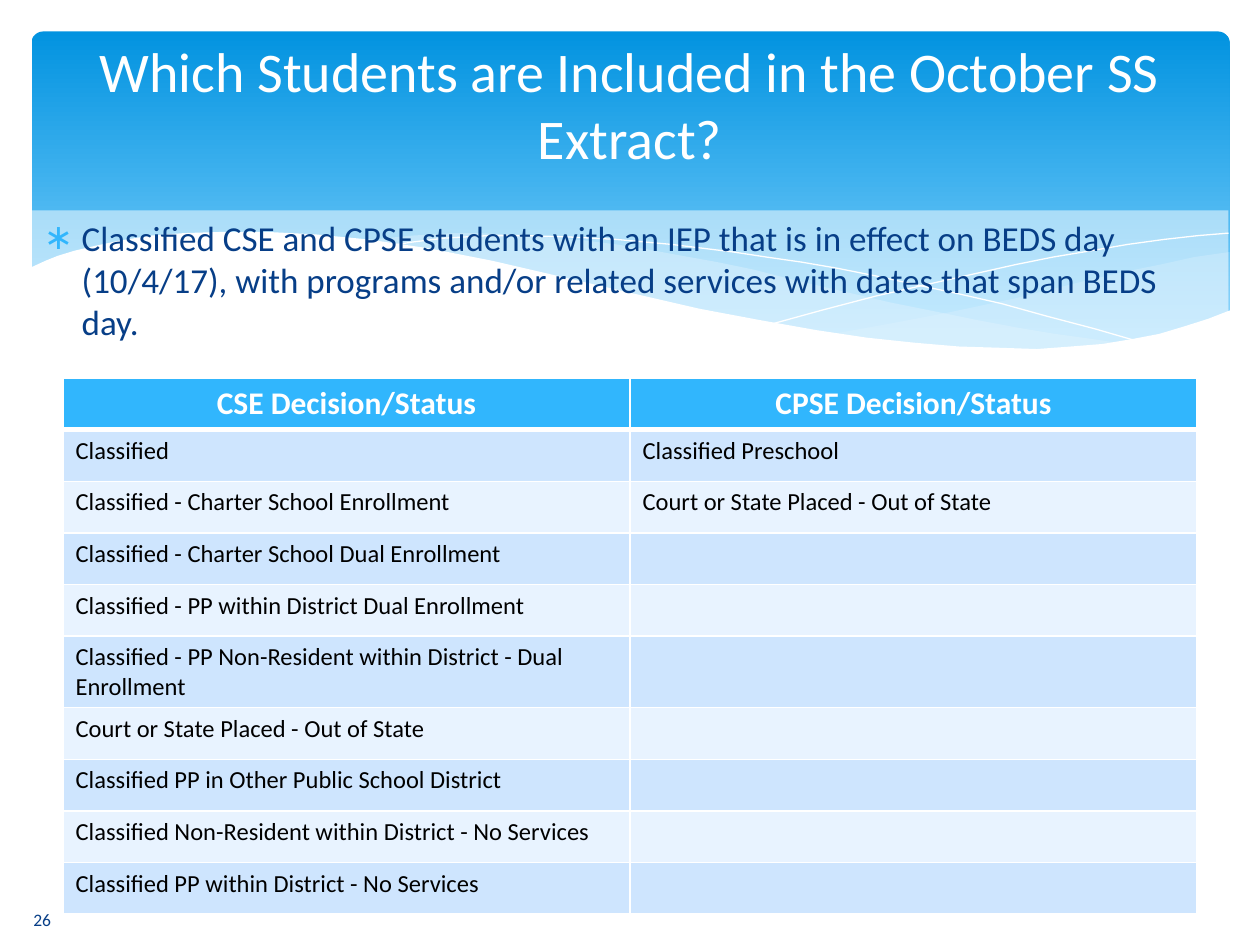
from lxml.etree import SubElement
from pptx import Presentation
from pptx.dml.color import RGBColor
from pptx.enum.shapes import MSO_SHAPE
from pptx.enum.text import MSO_ANCHOR, PP_ALIGN
from pptx.oxml.ns import qn
from pptx.util import Inches, Pt

COLORS = {
    "top": "0293E0", "bottom": "83D3FE", "wave": "C6E7FC", "white": "FFFFFF",
    "navy": "073E87", "accent": "31B6FD", "odd": "CEE5FE", "even": "E8F3FF",
    "black": "000000",
}

RIGHT_WAVE = [
    (9.76, 2), (9.48, 2.04), (9.21, 2.1), (8.91, 2.16), (8.61, 2.23), (8.05, 2.37),
    (7.53, 2.48), (7.06, 2.57), (6.61, 2.65), (6.91, 2.69), (7.19, 2.72), (7.45, 2.75),
    (7.69, 2.77), (8.03, 2.78), (8.35, 2.77), (8.63, 2.75), (8.89, 2.72), (9.13, 2.67),
    (9.35, 2.62), (9.49, 2.57), (9.63, 2.52), (9.76, 2.47),
]
LONG_WAVE = [
    (8.93, 2.73), (8.66, 2.69), (8.37, 2.65), (8.07, 2.6), (7.75, 2.54), (7.41, 2.47),
    (7.06, 2.4), (6.68, 2.31), (6.29, 2.22), (5.98, 2.14), (5.69, 2.08), (5.41, 2.03),
    (5.14, 1.98), (4.89, 1.94), (4.65, 1.91), (4.42, 1.89), (4.2, 1.87), (3.99, 1.86),
    (3.8, 1.85), (3.61, 1.85), (3.28, 1.87), (2.86, 1.91), (3.23, 1.96), (3.62, 2.03),
    (4.04, 2.11), (4.49, 2.22), (4.91, 2.32), (5.3, 2.4), (5.66, 2.48), (6.01, 2.55),
    (6.34, 2.61), (6.65, 2.66), (6.95, 2.7), (7.22, 2.74), (7.48, 2.76), (7.85, 2.78),
    (8.28, 2.78), (8.57, 2.77), (8.76, 2.75),
]
FALLING_LINE = [
    (3.09, 1.95), (3.28, 1.92), (3.53, 1.89), (3.87, 1.87), (4.16, 1.87), (4.5, 1.88),
    (4.89, 1.9), (5.33, 1.94), (5.82, 2), (6.08, 2.04), (6.36, 2.08), (6.65, 2.13),
    (6.95, 2.19), (7.27, 2.26), (7.6, 2.33), (7.95, 2.41), (8.31, 2.51), (8.69, 2.61),
    (9.07, 2.72),
]
RISING_LINE = [
    (6.13, 2.57), (6.53, 2.46), (6.95, 2.35), (7.48, 2.23), (8.06, 2.1), (8.36, 2.04),
    (8.66, 1.99), (8.95, 1.94), (9.24, 1.9), (9.51, 1.87), (9.75, 1.85),
]
WHITE_WAVE = [
    (9.77, 2.46), (9.59, 2.53), (9.4, 2.59), (9.2, 2.65), (8.99, 2.69), (8.75, 2.73),
    (8.5, 2.75), (8.23, 2.77), (7.93, 2.76), (7.61, 2.75), (7.26, 2.72), (6.88, 2.68),
    (6.48, 2.62), (6.03, 2.54), (5.55, 2.45), (5.03, 2.33), (4.47, 2.2), (3.91, 2.07),
    (3.4, 1.97), (2.92, 1.9), (2.5, 1.86), (2.11, 1.84), (1.77, 1.84), (1.46, 1.85),
    (1.19, 1.87), (0.95, 1.91), (0.76, 1.95), (0.59, 1.99), (0.46, 2.03), (0.36, 2.07),
    (0.23, 2.13), (0.23, 3.29), (9.77, 3.29),
]
ROWS = [
    ("CSE Decision/Status", "CPSE Decision/Status"),
    ("Classified", "Classified Preschool"),
    ("Classified - Charter School Enrollment", "Court or State Placed - Out of State"),
    ("Classified - Charter School Dual Enrollment", ""),
    ("Classified - PP within District Dual Enrollment", ""),
    ("Classified - PP Non-Resident within District - Dual Enrollment", ""),
    ("Court or State Placed - Out of State", ""),
    ("Classified PP in Other Public School District", ""),
    ("Classified Non-Resident within District - No Services", ""),
    ("Classified PP within District - No Services", ""),
]


def rgb(name):
    return RGBColor.from_string(COLORS[name])


class Deck:
    """Holds the text style and the current slide, and draws each kind of element."""

    font = "Calibri"

    def __init__(self, s):
        self.s = s

    def paint(self, sp, color, opacity=100):
        sp.shadow.inherit = False
        sp.line.fill.background()
        sp.fill.solid()
        sp.fill.fore_color.rgb = rgb(color)
        if opacity < 100:
            clr = sp.fill._xPr.find(".//" + qn("a:srgbClr"))
            SubElement(clr, qn("a:alpha"), val=str(opacity * 1000))

    def style(self, p, size, color, bold=False, align=PP_ALIGN.LEFT):
        p.alignment = align
        for r in p.runs:
            r.font.name = self.font
            r.font.size = Pt(size)
            r.font.bold = bold
            r.font.color.rgb = rgb(color)

    def banner(self, *box):
        sp = self.s.shapes.add_shape(MSO_SHAPE.ROUNDED_RECTANGLE, *map(Inches, box))
        sp.adjustments[0] = 0.034
        sp.shadow.inherit = False
        sp.line.fill.background()
        sp.fill.gradient()
        sp.fill.gradient_angle = 270
        stops = zip(sp.fill.gradient_stops, (0, 0.9), ("top", "bottom"))
        for stop, position, color in stops:
            stop.position = position
            stop.color.rgb = rgb(color)

    def freeform(self, points, close):
        start, *rest = [(Inches(x), Inches(y)) for x, y in points]
        builder = self.s.shapes.build_freeform(*start)
        builder.add_line_segments(rest, close=close)
        return builder.convert_to_shape()

    def wave(self, points, color, opacity=100):
        self.paint(self.freeform(points, True), color, opacity)

    def curve(self, points):
        sp = self.freeform(points, False)
        sp.shadow.inherit = False
        sp.fill.background()
        sp.line.color.rgb = rgb("white")
        sp.line.width = Pt(0)

    def text(self, text, box, size, color):
        sp = self.s.shapes.add_textbox(*map(Inches, box))
        tf = sp.text_frame
        tf.word_wrap = True
        tf.vertical_anchor = MSO_ANCHOR.MIDDLE
        tf.text = text
        self.style(tf.paragraphs[0], size, color, align=PP_ALIGN.CENTER)

    def bullet_panel(self, text, box):
        sp = self.s.shapes.add_shape(MSO_SHAPE.RECTANGLE, *map(Inches, box))
        self.paint(sp, "white", 52)
        tf = sp.text_frame
        tf.word_wrap = True
        tf.vertical_anchor = MSO_ANCHOR.TOP
        tf.text = text
        p = tf.paragraphs[0]
        p.space_before = Pt(4)
        self.style(p, 20, "navy")
        pPr = p._p.get_or_add_pPr()
        pPr.set("marL", str(Inches(0.3)))
        pPr.set("indent", str(Inches(-0.3)))
        clr = SubElement(pPr, qn("a:buClr"))
        SubElement(clr, qn("a:srgbClr"), val=COLORS["accent"])
        SubElement(pPr, qn("a:buFont"), typeface=self.font)
        SubElement(pPr, qn("a:buChar"), char="∗")

    def borders(self, cell, top, bottom):
        tcPr = cell._tc.get_or_add_tcPr()
        for side, width in zip("LRTB", (1, 1, top, bottom)):
            ln = SubElement(tcPr, qn("a:ln" + side), w=str(Pt(width)))
            fill = SubElement(ln, qn("a:solidFill"))
            SubElement(fill, qn("a:srgbClr"), val=COLORS["white"])

    def table(self, rows, left, top, width, row_height):
        size = Inches(width), Inches(row_height * len(rows))
        table = self.s.shapes.add_table(
            len(rows), len(rows[0]), Inches(left), Inches(top), *size).table
        for i, row in enumerate(rows):
            table.rows[i].height = Inches(row_height)
            for j, text in enumerate(row):
                cell = table.cell(i, j)
                self.borders(cell, 3 if i == 1 else 1, 3 if i == 0 else 1)
                cell.fill.solid()
                band = "odd" if i % 2 else "even"
                cell.fill.fore_color.rgb = rgb(band if i else "accent")
                cell.text_frame.text = text
                p = cell.text_frame.paragraphs[0]
                if i == 0:
                    self.style(p, 18, "white", True, PP_ALIGN.CENTER)
                else:
                    self.style(p, 14, "black")


def main():
    prs = Presentation()
    prs.slide_width, prs.slide_height = Inches(10), Inches(7.5)
    deck = Deck(prs.slides.add_slide(prs.slide_layouts[6]))
    deck.banner(0.25, 0.25, 9.51, 2.7)
    deck.wave(RIGHT_WAVE, "wave", 29)
    deck.wave(LONG_WAVE, "wave", 40)
    deck.curve(FALLING_LINE)
    deck.curve(RISING_LINE)
    deck.wave(WHITE_WAVE, "white")
    deck.bullet_panel(
        "Classified CSE and CPSE students with an IEP that is in effect on BEDS day "
        "(10/4/17), with programs and/or related services with dates that span BEDS day.",
        (0.25, 1.67, 9.5, 1.17))
    deck.text("Which Students are Included in the October SS Extract?",
              (0.5, 0.17, 9, 1.3), 32, "white")
    deck.table(ROWS, 0.5, 3, 9, 0.41)
    deck.text("26", (0, 7.09, 0.67, 0.41), 10, "navy")
    prs.save("out.pptx")


if __name__ == "__main__":
    main()
